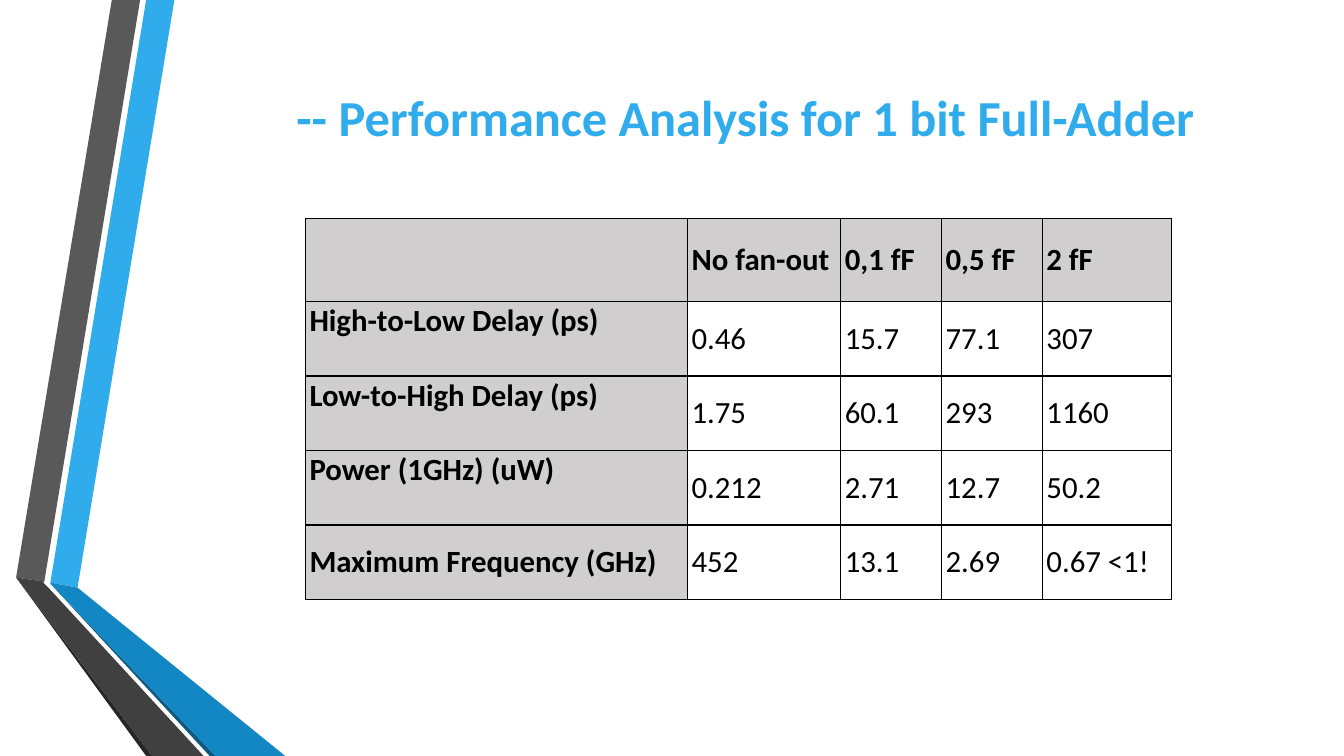
from dataclasses import dataclass

from lxml import etree
from pptx import Presentation
from pptx.dml.color import RGBColor
from pptx.enum.text import MSO_ANCHOR
from pptx.oxml.ns import qn
from pptx.util import Inches, Pt

TOP = MSO_ANCHOR.TOP
MIDDLE = MSO_ANCHOR.MIDDLE


@dataclass(frozen=True)
class Theme:
    font: str = "Calibri"
    title_size: int = 36
    table_size: int = 22
    border_width: int = 1
    accent: str = "30ACEC"
    accent_dark: str = "1287C3"
    accent_edge: str = "0C5A82"
    grey: str = "595959"
    grey_dark: str = "404040"
    grey_edge: str = "262626"
    heading_fill: str = "D0CECE"
    value_fill: str = "FFFFFF"
    ink: str = "000000"


THEME = Theme()

RIBBONS = [
    (THEME.accent, [(0.5, 5.78), (0.77, 5.83), (1.73, 0), (1.45, 0)]),
    (THEME.grey, [(1.39, 0), (1.11, 0), (0.16, 5.73), (0.44, 5.77)]),
    (THEME.grey_edge, [(0.16, 5.73), (1.45, 7.5), (1.51, 7.5)]),
    (THEME.accent_edge, [(0.5, 5.79), (2.08, 7.5), (2.14, 7.5)]),
    (THEME.accent_dark, [(0.5, 5.79), (2.14, 7.5), (2.83, 7.5), (0.77, 5.83), (0.5, 5.78)]),
    (THEME.grey_dark, [(2.02, 7.5), (0.48, 5.83), (0.43, 5.78), (0.44, 5.77),
                       (0.16, 5.73), (1.51, 7.5)]),
]

COLUMN_WIDTHS = [3.79, 1.52, 1, 1, 1.28]
ROW_HEIGHTS = [0.82] + [0.74] * 4
RESULTS = [
    ["", "No fan-out", "0,1 fF", "0,5 fF", "2 fF"],
    ["High-to-Low Delay (ps)", "0.46", "15.7", "77.1", "307"],
    ["Low-to-High Delay (ps)", "1.75", "60.1", "293", "1160"],
    ["Power (1GHz) (uW)", "0.212", "2.71", "12.7", "50.2"],
    ["Maximum Frequency (GHz)", "452", "13.1", "2.69", "0.67 <1!"],
]


def set_values(target, values):
    for name, value in values.items():
        setattr(target, name, value)


def write_text(frame, text, size, color, bold):
    span = frame.paragraphs[0].add_run()
    span.text = text
    set_values(span.font, {"name": THEME.font, "size": Pt(size), "bold": bold})
    span.font.color.rgb = RGBColor.from_string(color)


def add_ribbon(page, color, corners):
    points = [(Inches(x), Inches(y)) for x, y in corners]
    builder = page.shapes.build_freeform(*points[0], scale=1.0)
    builder.add_line_segments(points[1:], close=True)
    ribbon = builder.convert_to_shape()
    ribbon.shadow.inherit = False
    ribbon.fill.solid()
    ribbon.fill.fore_color.rgb = RGBColor.from_string(color)
    ribbon.line.fill.background()


def add_title(page, text):
    box = page.shapes.add_textbox(Inches(2.84), Inches(0.77), Inches(10.32), Inches(0.9))
    set_values(box.text_frame, {"word_wrap": True, "vertical_anchor": TOP,
                                "margin_top": Inches(0.08)})
    write_text(box.text_frame, text, THEME.title_size, THEME.accent, True)


def add_borders(cell):
    properties = cell._tc.get_or_add_tcPr()
    for side in ("lnL", "lnR", "lnT", "lnB"):
        line = etree.SubElement(properties, qn(f"a:{side}"), w=str(Pt(THEME.border_width)))
        fill = etree.SubElement(line, qn("a:solidFill"))
        etree.SubElement(fill, qn("a:srgbClr"), val=THEME.ink)


def format_cell(cell, text, row, column):
    heading = row == 0 or column == 0
    inset = Inches(0.02 if row == 0 else 0.01)
    top_label = column == 0 and row < len(RESULTS) - 1
    set_values(cell, {
        "margin_left": Inches(0.04),
        "margin_right": Inches(0.04),
        "margin_top": inset,
        "margin_bottom": inset,
        "vertical_anchor": TOP if top_label else MIDDLE,
    })
    add_borders(cell)
    cell.fill.solid()
    color = THEME.heading_fill if heading else THEME.value_fill
    cell.fill.fore_color.rgb = RGBColor.from_string(color)
    if text:
        write_text(cell.text_frame, text, THEME.table_size, THEME.ink, heading)


def add_results_table(page):
    frame = page.shapes.add_table(
        len(ROW_HEIGHTS), len(COLUMN_WIDTHS), Inches(3.03), Inches(2.17),
        Inches(sum(COLUMN_WIDTHS)), Inches(sum(ROW_HEIGHTS)))
    table = frame.table
    set_values(table, {"first_row": False, "horz_banding": False})
    for column, width in zip(table.columns, COLUMN_WIDTHS):
        column.width = Inches(width)
    for row, height in zip(table.rows, ROW_HEIGHTS):
        row.height = Inches(height)
    for row, texts in enumerate(RESULTS):
        for column, text in enumerate(texts):
            format_cell(table.cell(row, column), text, row, column)


def main():
    deck = Presentation()
    set_values(deck, {"slide_width": Inches(13.33), "slide_height": Inches(7.5)})
    page = deck.slides.add_slide(deck.slide_layouts[6])
    for color, corners in RIBBONS:
        add_ribbon(page, color, corners)
    add_title(page, "-- Performance Analysis for 1 bit Full-Adder")
    add_results_table(page)
    deck.save("out.pptx")


if __name__ == "__main__":
    main()
